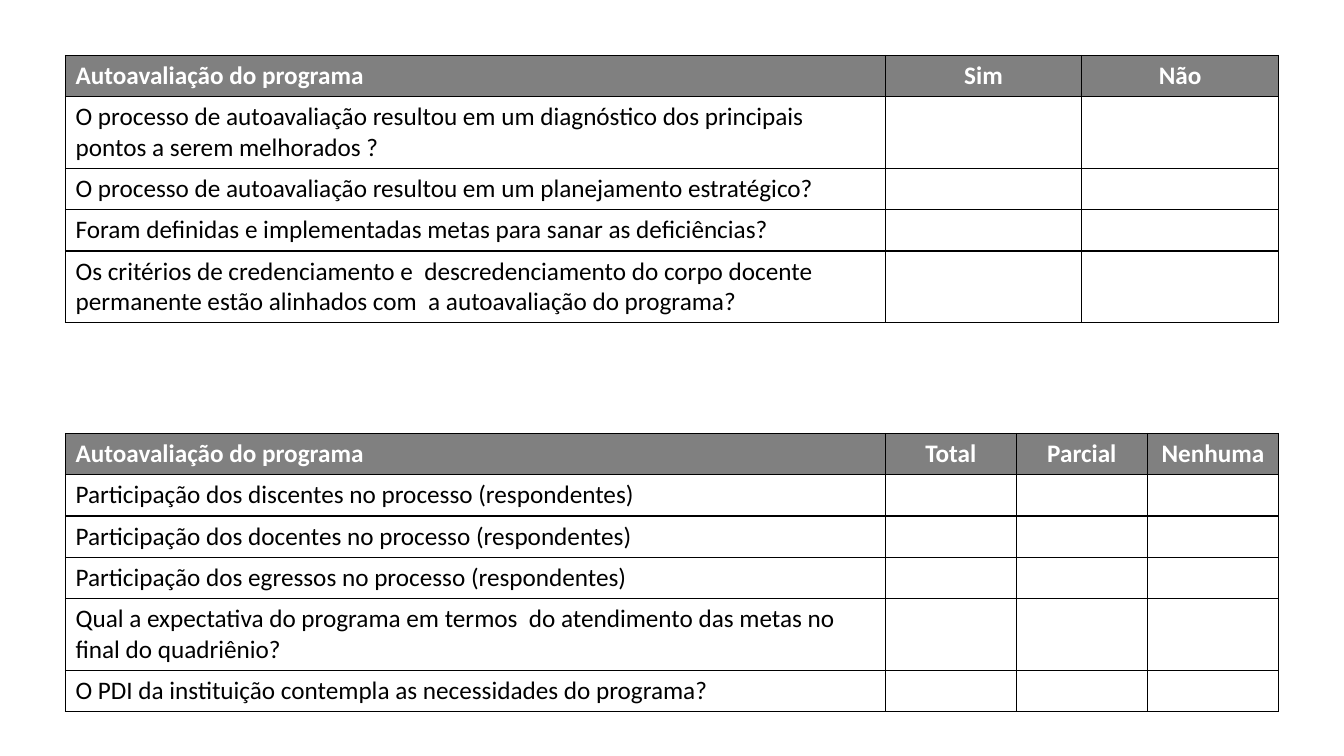
from lxml.etree import SubElement as Sub
from pptx import Presentation
from pptx.dml.color import RGBColor as Rgb
from pptx.enum.text import PP_ALIGN as Align
from pptx.oxml.ns import qn
from pptx.util import Inches, Pt

WIDE, HIGH = 13.33, 7.5
LEFT = 0.65
ROW = 0.41
ASK, MARKS = 8.13, 3.9  # widths of the question column and of all answer columns
INK = {"head": "808080", "light": "FFFFFF", "dark": "000000"}
TITLE = "Autoavaliação do programa"

CHECKS = [
    "O processo de autoavaliação resultou em um diagnóstico dos principais pontos a serem melhorados ?",
    "O processo de autoavaliação resultou em um planejamento estratégico?",
    "Foram definidas e implementadas metas para sanar as deficiências?",
    "Os critérios de credenciamento e  descredenciamento do corpo docente "
    "permanente estão alinhados com  a autoavaliação do programa?",
]
LEVELS = [
    *(f"Participação dos {group} no processo (respondentes)"
      for group in ("discentes", "docentes", "egressos")),
    "Qual a expectativa do programa em termos  do atendimento das metas no final do quadriênio?",
    "O PDI da instituição contempla as necessidades do programa?",
]


def frame(cell):
    """Draw a thin line on all four sides of a cell."""
    props = cell._tc.get_or_add_tcPr()
    for side in ("lnL", "lnR", "lnT", "lnB"):
        line = Sub(props, qn(f"a:{side}"), w=str(Pt(1)))
        fill = Sub(line, qn("a:solidFill"))
        Sub(fill, qn("a:srgbClr"), val=INK["dark"])


def style(cell, text, head, mark):
    frame(cell)
    if head:
        cell.fill.solid()
        cell.fill.fore_color.rgb = Rgb.from_string(INK["head"])
    else:
        cell.fill.background()
    cell.text = text
    para = cell.text_frame.paragraphs[0]
    para.alignment = Align.CENTER if mark else Align.LEFT
    font = para.font
    font.name, font.size, font.bold = "Calibri", Pt(18), head
    font.color.rgb = Rgb.from_string(INK["light" if head else "dark"])


def add_form(slide, top, marks, asks):
    """Add a table of questions with one empty column for each answer."""
    rows = [[TITLE, *marks]] + [[ask] + [""] * len(marks) for ask in asks]
    table = slide.shapes.add_table(
        len(rows), len(rows[0]), Inches(LEFT), Inches(top),
        Inches(ASK + MARKS), Inches(ROW * len(rows))).table
    table.horz_banding = False
    for i, col in enumerate(table.columns):
        col.width = Inches(MARKS / len(marks) if i else ASK)
    for r, row in enumerate(rows):
        table.rows[r].height = Inches(ROW)
        for c, text in enumerate(row):
            style(table.cell(r, c), text, r == 0, c > 0)


def main():
    deck = Presentation()
    deck.slide_width, deck.slide_height = Inches(WIDE), Inches(HIGH)
    slide = deck.slides.add_slide(deck.slide_layouts[6])
    add_form(slide, 0.55, ["Sim", "Não"], CHECKS)
    add_form(slide, 4.3, ["Total", "Parcial", "Nenhuma"], LEVELS)
    deck.save("out.pptx")


if __name__ == "__main__":
    main()
